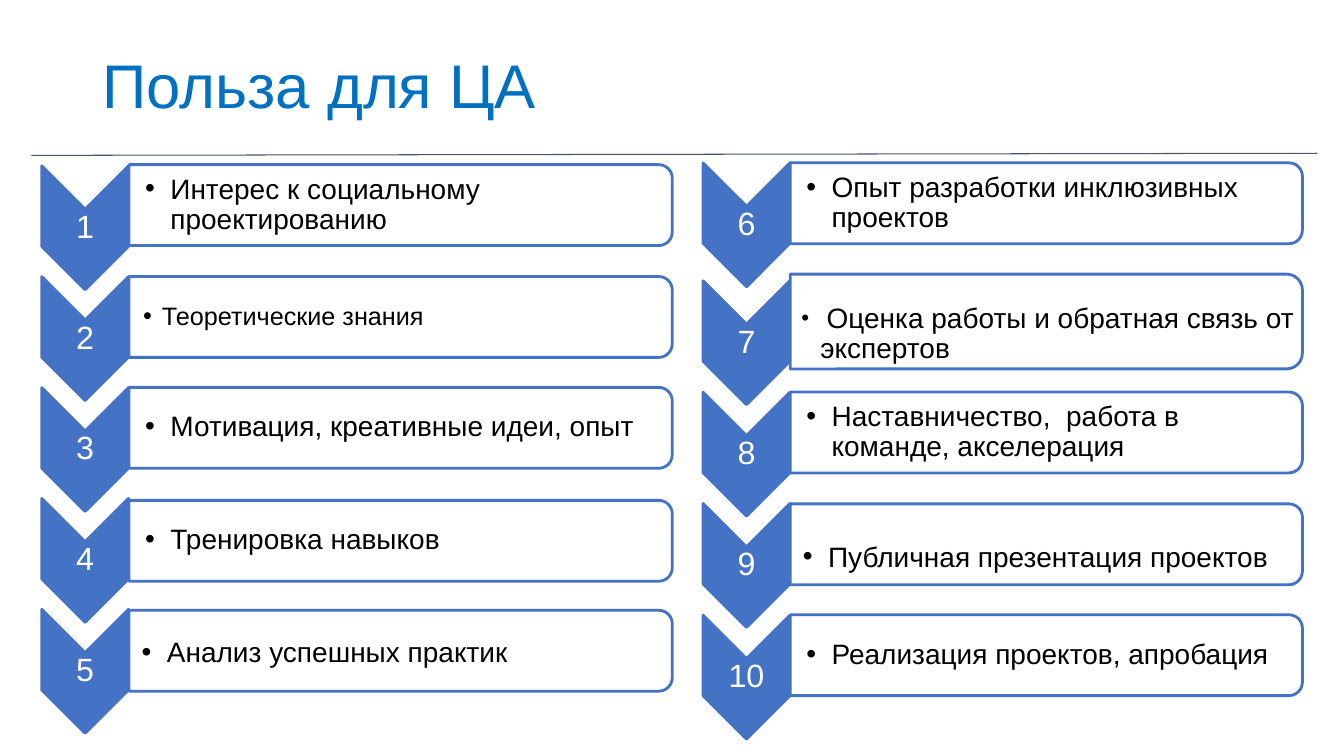
"""Build the slide of ten numbered benefits for the target audience."""
import pptx
import pptx.dml.color
import pptx.enum.shapes
import pptx.enum.text
import pptx.oxml.ns
import pptx.util
from lxml import etree

Pt = pptx.util.Pt
SHAPES = pptx.enum.shapes.MSO_SHAPE
ALIGN = pptx.enum.text.PP_ALIGN
ANCHOR = pptx.enum.text.MSO_ANCHOR

COLOURS = {
    "title": "0070C0",
    "rule": "44546A",
    "accent": "4472C4",
    "white": "FFFFFF",
    "black": "000000",
}
CHEVRON_LENGTH, CHEVRON_WIDTH = 88.5, 62
PANEL_HEIGHT = 57.8
COLUMNS = [
    {"chevron_x": 60.8, "panel_left": 92.2, "panel_width": 388, "text_width": 385},
    {"chevron_x": 533.2, "panel_left": 564.5, "panel_width": 365.8, "text_width": 362.6},
]
PLAIN = {"inset": 11.5, "indent": 18, "size": 20, "drop": 0}
BENEFITS = [
    [
        (162.7, 146.5, "Интерес к социальному проектированию", {}),
        (241.9, 226.4, "Теоретические знания", {"inset": 10, "indent": 13.5, "size": 18}),
        (321.1, 305.6, "Мотивация, креативные идеи, опыт", {}),
        (400.3, 386.3, "Тренировка навыков", {}),
        (479.5, 464.8, "Анализ успешных практик", {"inset": 9, "drop": 3.5}),
    ],
    [
        (160.6, 145.2, "Опыт разработки инклюзивных проектов", {}),
        (244.8, 229.7, "Оценка работы и обратная связь от экспертов",
         {"inset": 8, "indent": 13.5, "drop": 18, "height": 67.7, "lead_size": 16}),
        (324.5, 308.9, "Наставничество,  работа в команде, акселерация", {}),
        (403.9, 388.8, "Публичная презентация проектов", {"inset": 9, "drop": 19.5}),
        (483.8, 468, "Реализация проектов, апробация", {}),
    ],
]


def colour(name):
    """Return the named palette colour."""
    return pptx.dml.color.RGBColor.from_string(COLOURS[name])


def apply(target, values):
    """Set every attribute of a format dict on the target."""
    for name, value in values.items():
        setattr(target, name, value)


def add_span(para, text, size, shade):
    """Add one run of Arial text."""
    span = para.add_run()
    span.text = text
    apply(span.font, {"name": "Arial", "size": Pt(size)})
    span.font.color.rgb = colour(shade)


def add_box(page, left, top, width, height, insets, anchor):
    """Add an empty text box and return its first paragraph."""
    box = page.shapes.add_textbox(Pt(left), Pt(top), Pt(width), Pt(height))
    sides = ("margin_left", "margin_top", "margin_right", "margin_bottom")
    apply(box.text_frame, {"word_wrap": True, "vertical_anchor": anchor})
    apply(box.text_frame, {side: Pt(inset) for side, inset in zip(sides, insets)})
    para = box.text_frame.paragraphs[0]
    para.line_spacing = 0.9
    return para


def add_turned_shape(page, kind, centre_x, centre_y, length, breadth, shade):
    """Add an outlined preset shape turned a quarter clockwise."""
    shape = page.shapes.add_shape(
        kind, Pt(centre_x - length / 2), Pt(centre_y - breadth / 2), Pt(length), Pt(breadth))
    shape.rotation = 90
    shape.shadow.inherit = False
    shape.fill.solid()
    shape.fill.fore_color.rgb = colour(shade)
    shape.line.color.rgb = colour("accent")
    shape.line.width = Pt(2)
    return shape


def add_bullet(para, indent):
    """Give a paragraph a black round bullet with a hanging indent."""
    properties = para._p.get_or_add_pPr()
    properties.set("marL", str(Pt(indent)))
    properties.set("indent", str(-Pt(indent)))
    qualify = pptx.oxml.ns.qn
    bullet_colour = etree.SubElement(properties, qualify("a:buClr"))
    etree.SubElement(bullet_colour, qualify("a:srgbClr"), val=COLOURS["black"])
    etree.SubElement(properties, qualify("a:buFont"), typeface="Arial")
    etree.SubElement(properties, qualify("a:buChar"), char="•")


def add_number(page, number, centre_x, centre_y):
    """Add a downward chevron with its number."""
    add_turned_shape(page, SHAPES.CHEVRON, centre_x, centre_y,
                     CHEVRON_LENGTH, CHEVRON_WIDTH, "accent")
    para = add_box(page, centre_x - 31, centre_y - 13.2, 62, 26.4, [1.4] * 4, ANCHOR.MIDDLE)
    para.alignment = ALIGN.CENTER
    add_span(para, str(number), 23, "white")


def add_panel(page, column, centre_y, text, changes):
    """Add a panel rounded on the right with one bulleted benefit."""
    look = {**PLAIN, **changes}
    height = look.get("height", PANEL_HEIGHT)
    left, width = column["panel_left"], column["panel_width"]
    panel = add_turned_shape(page, SHAPES.ROUND_2_SAME_RECTANGLE, left + width / 2,
                             centre_y, height, width, "white")
    fill_colour = panel.fill._xPr.find(".//" + pptx.oxml.ns.qn("a:srgbClr"))
    etree.SubElement(fill_colour, pptx.oxml.ns.qn("a:alpha"), val="90000")
    text_height = height - 6
    para = add_box(page, left, centre_y - text_height / 2, column["text_width"], text_height,
                   [look["inset"], 0.7 + look["drop"], 0.7, 0.7], ANCHOR.MIDDLE)
    add_bullet(para, look["indent"])
    para.level = 1
    if "lead_size" in look:
        add_span(para, " ", look["lead_size"], "black")
    add_span(para, text, look["size"], "black")


def add_rule(page):
    """Add the thin line under the title."""
    rule = page.shapes.add_connector(
        pptx.enum.shapes.MSO_CONNECTOR.STRAIGHT, Pt(22.5), Pt(111), Pt(941), Pt(109.5))
    rule.line.color.rgb = colour("rule")
    rule.line.width = Pt(0.75)
    etree.SubElement(rule._element.spPr, pptx.oxml.ns.qn("a:effectLst"))


def main():
    """Build and save the deck."""
    deck = pptx.Presentation()
    apply(deck, {"slide_width": Pt(960), "slide_height": Pt(540)})
    page = deck.slides.add_slide(deck.slide_layouts[6])
    title = add_box(page, 66.2, 28.8, 808.6, 62, [7.2, 3.6, 7.2, 3.6], ANCHOR.BOTTOM)
    add_span(title, "Польза для ЦА", 44, "title")
    add_rule(page)
    number = 0
    for column, benefits in zip(COLUMNS, BENEFITS):
        for chevron_y, panel_y, text, changes in benefits:
            number += 1
            add_number(page, number, column["chevron_x"], chevron_y)
            add_panel(page, column, panel_y, text, changes)
    deck.save("out.pptx")


if __name__ == "__main__":
    main()
